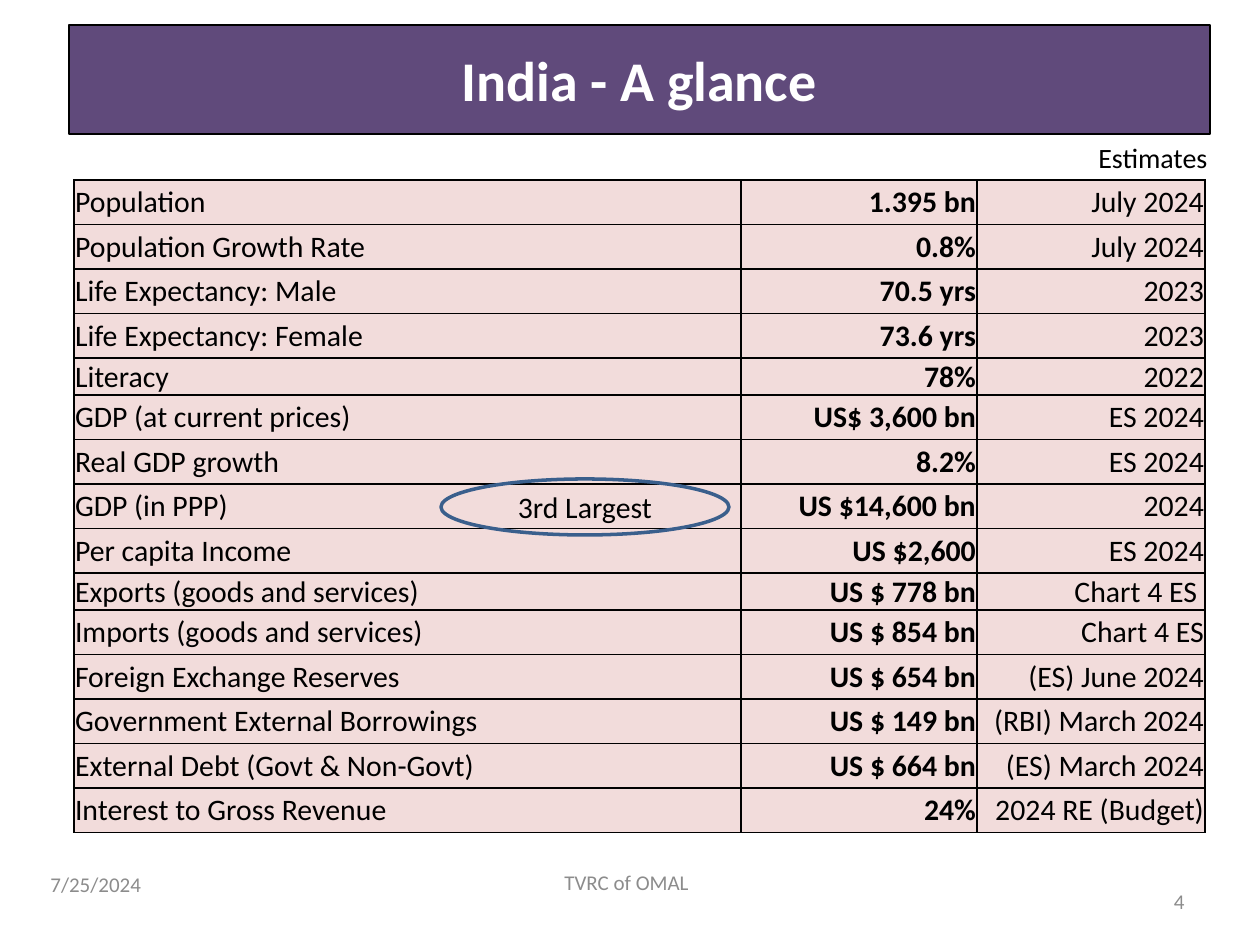
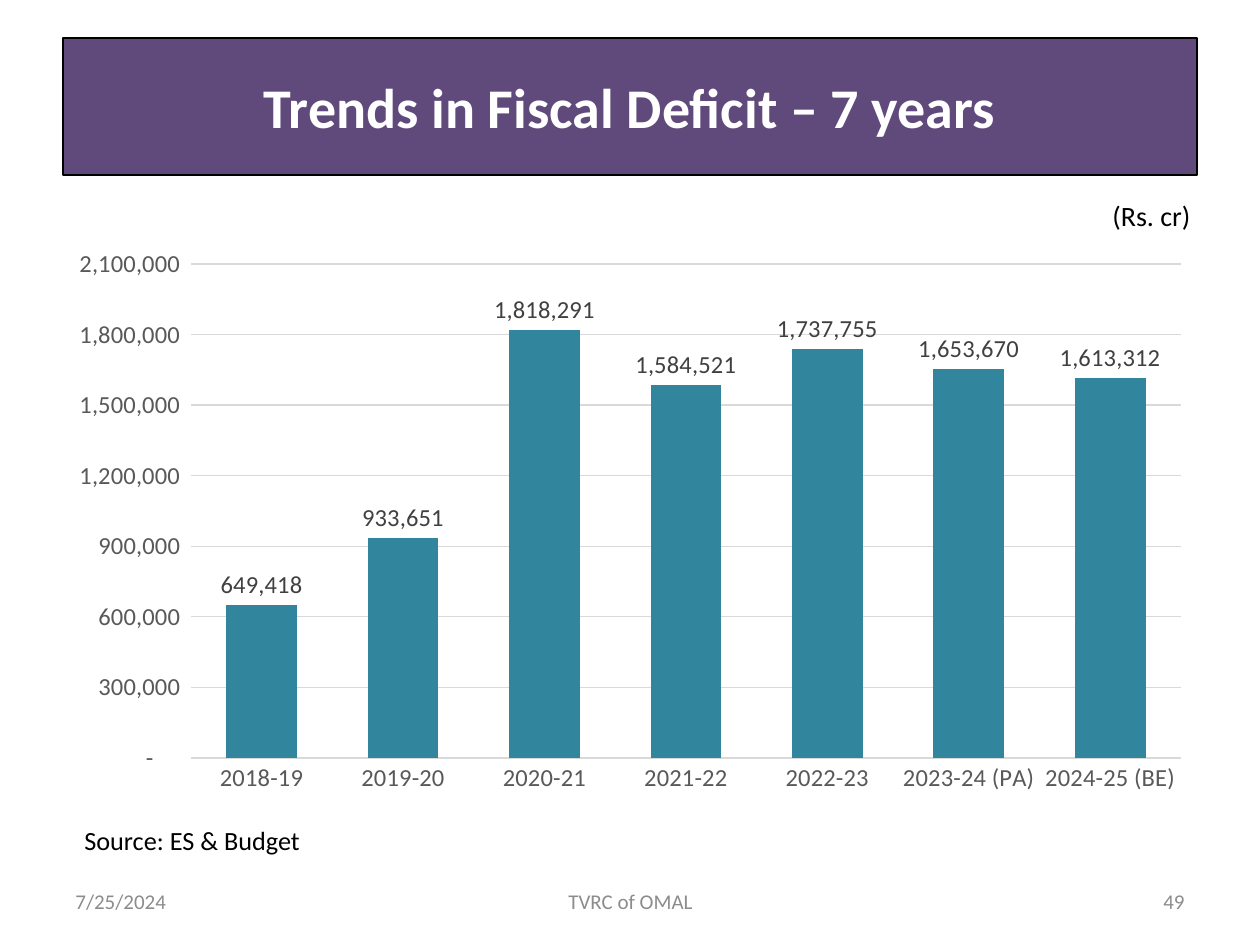
from lxml import etree
from pptx import Presentation
from pptx.chart.data import CategoryChartData
from pptx.dml.color import RGBColor
from pptx.enum.chart import XL_CHART_TYPE, XL_LABEL_POSITION, XL_TICK_MARK
from pptx.enum.shapes import MSO_SHAPE
from pptx.enum.text import MSO_ANCHOR, PP_ALIGN
from pptx.oxml import parse_xml
from pptx.oxml.ns import nsdecls, qn
from pptx.util import Pt

LEFT, CENTER, RIGHT = PP_ALIGN.LEFT, PP_ALIGN.CENTER, PP_ALIGN.RIGHT
TOP, MIDDLE = MSO_ANCHOR.TOP, MSO_ANCHOR.MIDDLE
COLUMNS = XL_CHART_TYPE.COLUMN_CLUSTERED
OUTSIDE_END = XL_LABEL_POSITION.OUTSIDE_END
NO_TICK = XL_TICK_MARK.NONE
OVAL = MSO_SHAPE.OVAL

BLACK = RGBColor(0x00, 0x00, 0x00)
WHITE = RGBColor(0xFF, 0xFF, 0xFF)
PURPLE = RGBColor(0x60, 0x4A, 0x7B)
PINK = RGBColor(0xF2, 0xDC, 0xDB)
TEAL = RGBColor(0x31, 0x85, 0x9C)
RING_BLUE = RGBColor(0x3A, 0x5F, 0x8C)
FOOTER_GREY = RGBColor(0x8C, 0x8C, 0x8C)
AXIS_GREY = RGBColor(0x59, 0x59, 0x59)
LABEL_GREY = RGBColor(0x40, 0x40, 0x40)
GRID_GREY = RGBColor(0xD9, 0xD9, 0xD9)

FONT = "Calibri"
SLIDE_SIZE = (1260, 945)
EMU_PER_PX = 914400 / 126

# Content: (indicator, value, period)
INDICATORS = [
    ("Population", "1.395 bn", "July 2024"),
    ("Population Growth Rate", "0.8%", "July 2024"),
    ("Life Expectancy: Male", "70.5 yrs", "2023"),
    ("Life Expectancy: Female", "73.6 yrs", "2023"),
    ("Literacy", "78%", "2022"),
    ("GDP (at current prices)", "US$ 3,600 bn", "ES 2024"),
    ("Real GDP growth", "8.2%", "ES 2024"),
    ("GDP (in PPP)", "US $14,600 bn", "2024"),
    ("Per capita Income", "US $2,600", "ES 2024"),
    ("Exports (goods and services)", "US $ 778 bn", "Chart 4 ES "),
    ("Imports (goods and services)", "US $ 854 bn", "Chart 4 ES"),
    ("Foreign Exchange Reserves", "US $ 654 bn", "(ES) June 2024"),
    ("Government External Borrowings", "US $ 149 bn", "(RBI) March 2024"),
    ("External Debt (Govt & Non-Govt)", "US $ 664 bn", "(ES) March 2024"),
    ("Interest to Gross Revenue", "24%", "2024 RE (Budget)"),
]
SHORT_ROWS = {"Literacy", "Exports (goods and services)"}
SHORT_ROW = 37
TABLE_BOX = (74, 180, 1131, 653)
TABLE_COLUMNS = (667, 236, 228)
TABLE_ALIGNMENTS = (LEFT, RIGHT, RIGHT)

DEFICITS = {
    "2018-19": 649418,
    "2019-20": 933651,
    "2020-21": 1818291,
    "2021-22": 1584521,
    "2022-23": 1737755,
    "2023-24 (PA)": 1653670,
    "2024-25 (BE)": 1613312,
}
DEFICIT_FORMAT = '_ * #,##0_ ;_ * \\-#,##0_ ;_ * "-"??_ ;_ '
CHART_BOX = (50, 238, 1153, 567)
PLOT_BOX = (191, 264, 990, 494)

DATE, ORGANISER = "7/25/2024", "TVRC of OMAL"
FOOTER_HEIGHT = 50
DATE_WIDTH, ORGANISER_WIDTH, NUMBER_WIDTH = 294, 399, 294


def emu(*lengths):
    return [round(length * EMU_PER_PX) for length in lengths]


def set_font(font, size, color, bold=False):
    font.name, font.size, font.bold = FONT, Pt(size), bold
    font.color.rgb = color


def write(frame, text, size, color, align=LEFT, bold=False):
    paragraph = frame.paragraphs[0]
    paragraph.text = text
    paragraph.alignment = align
    set_font(paragraph.font, size, color, bold)


def add_text(slide, box, text, size, color=BLACK, align=LEFT, anchor=TOP):
    frame = slide.shapes.add_textbox(*emu(*box)).text_frame
    frame.word_wrap = True
    frame.vertical_anchor = anchor
    write(frame, text, size, color, align)


def add_slide(prs, title, band_box, number, date_at, organiser_at):
    """Add a slide with its title band and the three footers."""
    slide = prs.slides.add_slide(prs.slide_layouts[5])
    band = slide.shapes.title
    band.left, band.top, band.width, band.height = emu(*band_box)
    band.fill.solid()
    band.fill.fore_color.rgb = PURPLE
    band.line.color.rgb = BLACK
    band.line.width = Pt(0.75)
    band.text_frame.vertical_anchor = MIDDLE
    write(band.text_frame, title, 32, WHITE, CENTER, bold=True)

    for text, at, width, align in (
        (DATE, date_at, DATE_WIDTH, LEFT),
        (ORGANISER, organiser_at, ORGANISER_WIDTH, CENTER),
        (number, (903, 876), NUMBER_WIDTH, RIGHT),
    ):
        add_text(slide, (*at, width, FOOTER_HEIGHT), text, 12, FOOTER_GREY, align, MIDDLE)
    return slide


def add_borders(cell):
    properties = cell._tc.get_or_add_tcPr()
    for index, side in enumerate(("lnL", "lnR", "lnT", "lnB")):
        border = parse_xml(
            f'<a:{side} {nsdecls("a")} w="12700"><a:solidFill>'
            f'<a:srgbClr val="{BLACK}"/></a:solidFill></a:{side}>'
        )
        properties.insert(index, border)


def add_indicator_table(slide):
    table = slide.shapes.add_table(
        len(INDICATORS), len(TABLE_COLUMNS), *emu(*TABLE_BOX)
    ).table
    table.first_row = table.horz_banding = False
    for column, width in zip(table.columns, TABLE_COLUMNS):
        column.width = emu(width)[0]

    tall_count = len(INDICATORS) - len(SHORT_ROWS)
    tall_row = (TABLE_BOX[3] - SHORT_ROW * len(SHORT_ROWS)) / tall_count
    for row, entries in zip(table.rows, INDICATORS):
        row.height = emu(SHORT_ROW if entries[0] in SHORT_ROWS else tall_row)[0]
        for index, (cell, text) in enumerate(zip(row.cells, entries)):
            cell.fill.solid()
            cell.fill.fore_color.rgb = PINK
            cell.margin_left = cell.margin_right = cell.margin_top = emu(1)[0]
            cell.margin_bottom = 0
            cell.vertical_anchor = MIDDLE
            write(cell.text_frame, text, 17, BLACK, TABLE_ALIGNMENTS[index], bold=index == 1)
            add_borders(cell)


def add_rank_ring(slide):
    ring = slide.shapes.add_shape(OVAL, *emu(441, 479, 288, 56))
    ring.shadow.inherit = False
    ring.fill.background()
    ring.line.color.rgb = RING_BLUE
    ring.line.width = Pt(2)
    frame = ring.text_frame
    frame.margin_left = frame.margin_right = frame.margin_top = frame.margin_bottom = 0
    frame.vertical_anchor = MIDDLE
    write(frame, "3rd Largest", 17, BLACK, CENTER)


def place_plot(chart):
    """Fix the inner plot area at PLOT_BOX."""
    x, y, width, height = PLOT_BOX
    left, top, chart_width, chart_height = CHART_BOX
    settings = {
        "layoutTarget": "inner", "xMode": "edge", "yMode": "edge",
        "x": (x - left) / chart_width, "y": (y - top) / chart_height,
        "w": width / chart_width, "h": height / chart_height,
    }
    plot_area = chart._chartSpace.chart.plotArea
    for old in plot_area.findall(qn("c:layout")):
        plot_area.remove(old)
    layout = etree.Element(qn("c:layout"))
    manual = etree.SubElement(layout, qn("c:manualLayout"))
    for name, value in settings.items():
        etree.SubElement(manual, qn(f"c:{name}")).set("val", str(value))
    plot_area.insert(0, layout)


def add_deficit_chart(slide):
    data = CategoryChartData(number_format=DEFICIT_FORMAT)
    data.categories = list(DEFICITS)
    data.add_series("Series 1", list(DEFICITS.values()))
    chart = slide.shapes.add_chart(COLUMNS, *emu(*CHART_BOX), data).chart
    chart.has_legend = chart.has_title = False
    set_font(chart.font, 10, BLACK)

    plot = chart.plots[0]
    plot.gap_width, plot.overlap = 100, -24
    plot.vary_by_categories = False
    bars = plot.series[0].format.fill
    bars.solid()
    bars.fore_color.rgb = TEAL
    plot.has_data_labels = True
    labels = plot.data_labels
    labels.show_value = True
    labels.position = OUTSIDE_END
    labels.number_format, labels.number_format_is_linked = DEFICIT_FORMAT, False
    set_font(labels.font, 14, LABEL_GREY)

    years, amounts = chart.category_axis, chart.value_axis
    for axis in (years, amounts):
        axis.major_tick_mark = axis.minor_tick_mark = NO_TICK
        set_font(axis.tick_labels.font, 14, AXIS_GREY)
    years.format.line.color.rgb = GRID_GREY
    years.format.line.width = Pt(1)
    amounts.format.line.fill.background()
    amounts.minimum_scale, amounts.maximum_scale, amounts.major_unit = 0, 2100000, 300000
    amounts.tick_labels.number_format = DEFICIT_FORMAT
    amounts.tick_labels.number_format_is_linked = False
    grid = amounts.major_gridlines.format.line
    grid.color.rgb = GRID_GREY
    grid.width = Pt(0.75)
    place_plot(chart)


def main():
    prs = Presentation()
    prs.slide_width, prs.slide_height = emu(*SLIDE_SIZE)

    glance = add_slide(prs, "India - A glance", (69, 25, 1141, 109), "4", (38, 859), (427, 857))
    add_indicator_table(glance)
    add_rank_ring(glance)
    add_text(glance, (1086, 134, 174, 47), "Estimates", 16)

    trends = add_slide(prs, "Trends in Fiscal Deficit – 7 years", (63, 38, 1134, 137),
                       "49", (63, 876), (431, 876))
    add_text(trends, (1100, 192, 160, 47), "(Rs. cr)", 16)
    add_text(trends, (72, 818, 417, 44), "Source: ES & Budget", 15)
    add_deficit_chart(trends)

    prs.save("out.pptx")


if __name__ == "__main__":
    main()
